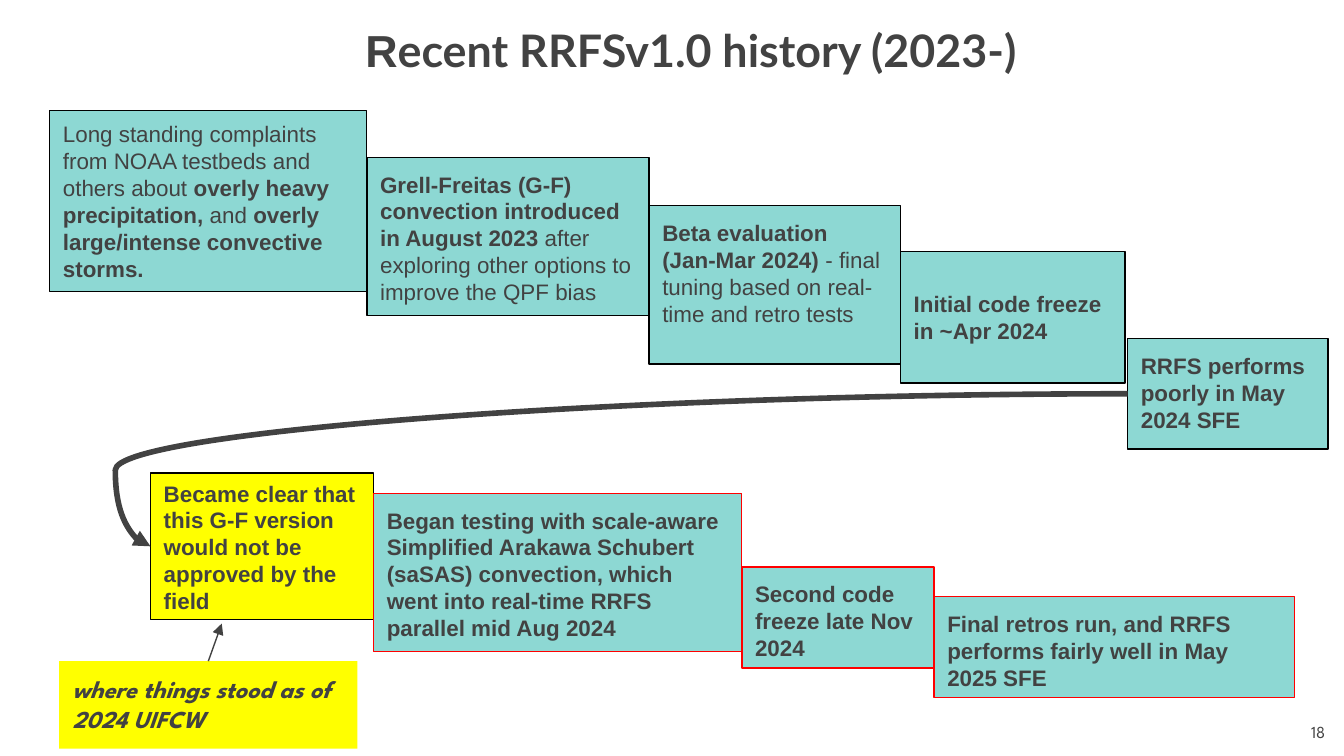
from dataclasses import dataclass

from lxml import etree
from pptx import Presentation
from pptx import util as u
from pptx.dml.color import RGBColor
from pptx.enum import shapes, text
from pptx.oxml.ns import qn
from pptx.shapes.autoshape import Shape
from pptx.shapes.connector import Connector

INK = RGBColor(0x42, 0x42, 0x42)
TEAL = RGBColor(0x8D, 0xD8, 0xD3)
YELLOW = RGBColor(0xFF, 0xFF, 0x00)
BLACK = RGBColor(0x00, 0x00, 0x00)
RED = RGBColor(0xFF, 0x00, 0x00)

CELL = 0.1  # side of a grid cell in inches; the slide is 100 columns wide
LEFT, TOP = 1, 0  # connection sites of a rectangle


@dataclass(frozen=True)
class Span:
    text: str
    bold: bool = True
    font: str = "Arial"


@dataclass(frozen=True)
class Step:
    """One event of a timeline; its left edge follows from the step before."""
    row: float
    columns: float
    rows: float
    spans: tuple[Span, ...]
    fill: RGBColor = TEAL
    line: RGBColor = BLACK
    anchor: text.MSO_ANCHOR = text.MSO_ANCHOR.TOP
    inset: float = 1
    gap: float = 0


MIDDLE = text.MSO_ANCHOR.MIDDLE

STEPS_TO_MAY_2024 = (
    Step(8.2, 23.6, 13.5, (
        Span("Long standing complaints from NOAA testbeds and others about", False),
        Span(" overly heavy precipitation, "),
        Span("and ", False),
        Span("overly large/intense convective storms."),
    ), anchor=MIDDLE),
    Step(11.7, 21, 11.8, (
        Span("Grell-Freitas (G-F) convection introduced in August 2023"),
        Span(" after exploring other options to improve the QPF bias", False),
    )),
    Step(15.3, 18.7, 11.8, (
        Span("Beta evaluation (Jan-Mar 2024)"),
        Span(" - final tuning based on real-time and retro tests", False),
    )),
    Step(18.7, 16.7, 9.8, (Span("Initial code freeze in ~Apr 2024"),), anchor=MIDDLE),
    Step(25.2, 14.9, 8.2, (Span("RRFS performs poorly in May 2024 SFE"),), gap=0.2),
)
STEPS_TO_MAY_2025 = (
    Step(35.2, 16.6, 10.9, (
        Span("Became clear that this G-F version would not be approved by the field"),
    ), fill=YELLOW, inset=0.5),
    Step(36.7, 27.4, 11.8, (
        Span("Began testing with scale-aware Simplified Arakawa Schubert (saSAS) "
             "convection, which went into real-time RRFS parallel mid Aug 2024"),
    ), line=RED),
    Step(42.2, 14.3, 7.5, (Span("Second code freeze late Nov 2024"),), line=RED),
    Step(44.4, 26.8, 7.5, (
        Span("Final retros run, and RRFS performs fairly well in May 2025 SFE"),
    ), line=RED),
)


def cells(count: float) -> u.Emu:
    return u.Inches(count * CELL)


def write(box: Shape, *spans: Span, size: float = 12, italic: bool = False,
          align: text.PP_ALIGN = text.PP_ALIGN.LEFT,
          anchor: text.MSO_ANCHOR = text.MSO_ANCHOR.TOP, inset: float = 1) -> None:
    frame = box.text_frame
    frame.word_wrap = True
    frame.vertical_anchor = anchor
    frame.margin_left = frame.margin_right = cells(1)
    frame.margin_top = frame.margin_bottom = cells(inset)
    para = frame.paragraphs[0]
    para.alignment = align
    for span in spans:
        run = para.add_run()
        run.text = span.text
        run.font.name = span.font
        run.font.size = u.Pt(size)
        run.font.bold = span.bold
        run.font.italic = italic
        run.font.color.rgb = INK


def add_box(page, column: float, row: float, columns: float, rows: float,
            fill: RGBColor, line: RGBColor | None = None) -> Shape:
    box = page.shapes.add_shape(shapes.MSO_SHAPE.RECTANGLE, cells(column),
                                cells(row), cells(columns), cells(rows))
    box.shadow.inherit = False
    box.fill.solid()
    box.fill.fore_color.rgb = fill
    if line is None:
        box.line.fill.background()
    else:
        box.line.color.rgb = line
        box.line.width = u.Pt(0.75)
    return box


def add_timeline(page, column: float, steps: tuple[Step, ...]) -> list[Shape]:
    """Set the steps side by side, starting at the given column."""
    boxes = []
    for step in steps:
        column += step.gap
        box = add_box(page, column, step.row, step.columns, step.rows, step.fill, step.line)
        write(box, *step.spans, anchor=step.anchor, inset=step.inset)
        boxes.append(box)
        column += step.columns
    return boxes


def add_arrow(page, kind: shapes.MSO_CONNECTOR, width: float,
              end: tuple[float, float] = (0, 0)) -> Connector:
    arrow = page.shapes.add_connector(kind, 0, 0, cells(end[0]), cells(end[1]))
    arrow.line.color.rgb = INK
    arrow.line.width = u.Pt(width)
    etree.SubElement(arrow.line._get_or_add_ln(), qn("a:tailEnd"), type="triangle")
    etree.SubElement(arrow._element.spPr, qn("a:effectLst"))
    return arrow


def bend(arrow: Connector, share: float) -> None:
    """Put the turn of a curved connector at a share of its width."""
    guides = arrow._element.spPr.find(qn("a:prstGeom")).get_or_add_avLst()
    etree.SubElement(guides, qn("a:gd"), name="adj1", fmla=f"val {round(share * 100000)}")


def add_label(page, column: float, row: float, columns: float, rows: float) -> Shape:
    return page.shapes.add_textbox(cells(column), cells(row), cells(columns), cells(rows))


def main() -> None:
    deck = Presentation()
    deck.slide_width, deck.slide_height = cells(100), cells(56.25)
    page = deck.slides.add_slide(deck.slide_layouts[6])

    title = add_label(page, 7.8, 0.4, 87.2, 6.5)
    write(title, Span("R"), Span("ecent RRFSv1.0 history (2023-)", font="Lato"), size=24,
          align=text.PP_ALIGN.CENTER, anchor=MIDDLE, inset=0.5)

    poor_result = add_timeline(page, 3.7, STEPS_TO_MAY_2024)[-1]
    rejection = add_timeline(page, 11.2, STEPS_TO_MAY_2025)[0]

    turn_back = add_arrow(page, shapes.MSO_CONNECTOR.CURVE, 3)
    turn_back.begin_connect(poor_result, LEFT)
    turn_back.end_connect(rejection, LEFT)
    bend(turn_back, 1.036)

    note = add_box(page, 4.4, 49.2, 22.2, 6.5, YELLOW)
    write(note, Span("where things stood as of 2024 UIFCW", font="League Spartan"),
          size=13, italic=True)
    pointer = add_arrow(page, shapes.MSO_CONNECTOR.STRAIGHT, 0.75, end=(16.5, 46.4))
    pointer.begin_connect(note, TOP)

    number = add_label(page, 93.6, 52.6, 6, 3.7)
    write(number, Span("18", False, "League Spartan"), size=9,
          align=text.PP_ALIGN.RIGHT, anchor=MIDDLE)

    deck.save("out.pptx")


if __name__ == "__main__":
    main()
